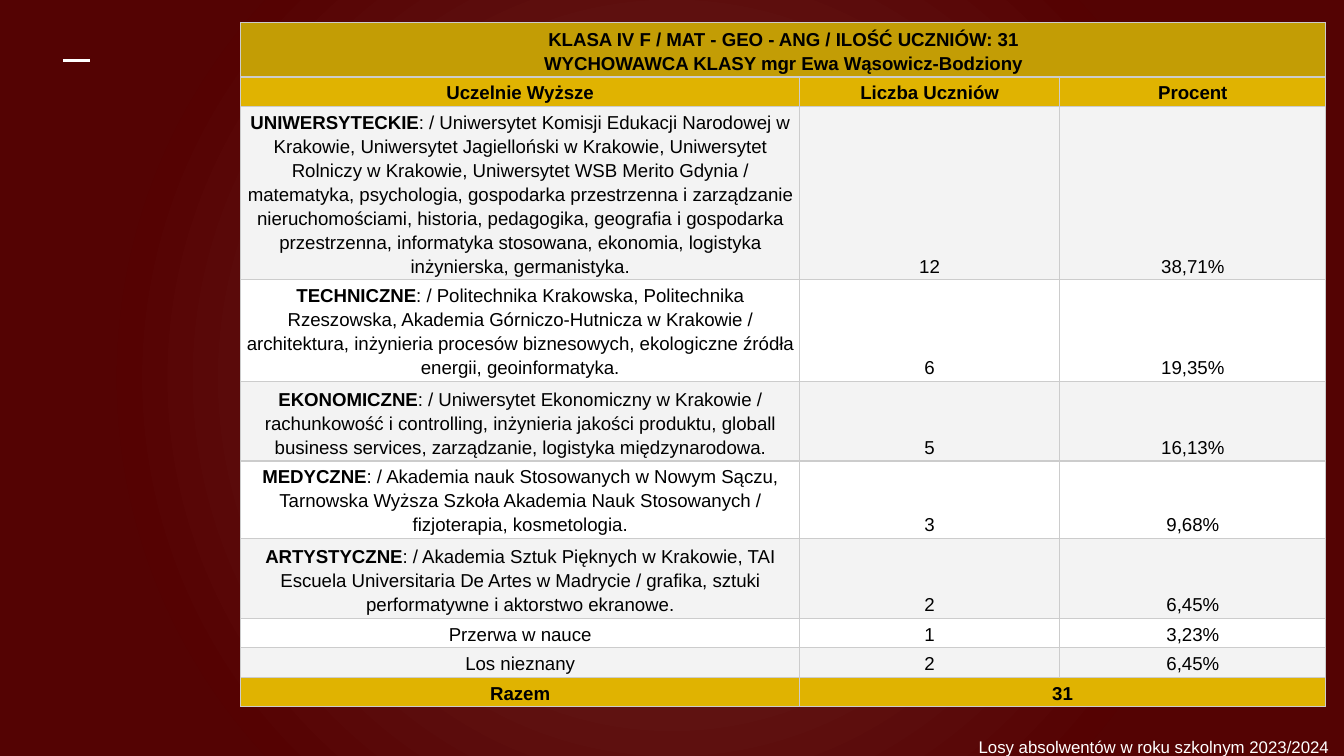
from pptx import Presentation
from pptx.dml.color import RGBColor
from pptx.enum.shapes import MSO_CONNECTOR as Connector
from pptx.enum.text import MSO_ANCHOR as Anchor, PP_ALIGN as Align
from pptx.oxml import parse_xml
from pptx.oxml.ns import nsdecls
from pptx.oxml.xmlchemy import OxmlElement
from pptx.util import Pt

PX = 9525
FONT = "Arial"
WHITE = RGBColor(0xFF, 0xFF, 0xFF)
BLACK = RGBColor(0x00, 0x00, 0x00)
LIGHT_GREY = RGBColor(0xF3, 0xF3, 0xF3)
BORDER_GREY = RGBColor(0xCC, 0xCC, 0xCC)
GOLD = RGBColor(0xE0, 0xB3, 0x01)
DARK_GOLD = RGBColor(0xC3, 0x9D, 0x05)
GLOW_RED = RGBColor(0x70, 0x2D, 0x2A)
DEEP_RED = RGBColor(0x55, 0x02, 0x02)
EDGE_RED = RGBColor(0x54, 0x03, 0x03)

COLUMNS = [399, 186, 190]
ROW_HEIGHTS = [39, 21, 109, 57, 57, 43, 57, 21, 21, 21]
TITLE = [
    "KLASA IV F / MAT - GEO - ANG / ILOŚĆ UCZNIÓW: 31",
    "WYCHOWAWCA KLASY mgr Ewa Wąsowicz-Bodziony",
]
HEADERS = ["Uczelnie Wyższe", "Liczba Uczniów", "Procent"]
RESULTS = [
    ("UNIWERSYTECKIE",
     ": / Uniwersytet Komisji Edukacji Narodowej w Krakowie, Uniwersytet Jagielloński w Krakowie, "
     "Uniwersytet Rolniczy w Krakowie, Uniwersytet WSB Merito Gdynia / matematyka, psychologia, "
     "gospodarka przestrzenna i zarządzanie nieruchomościami, historia, pedagogika, geografia i "
     "gospodarka przestrzenna, informatyka stosowana, ekonomia, logistyka inżynierska, germanistyka.",
     "12", "38,71%"),
    ("TECHNICZNE",
     ": / Politechnika Krakowska, Politechnika Rzeszowska, Akademia Górniczo-Hutnicza w Krakowie / "
     "architektura, inżynieria procesów biznesowych, ekologiczne źródła energii, geoinformatyka.",
     "6", "19,35%"),
    ("EKONOMICZNE",
     ": / Uniwersytet Ekonomiczny w Krakowie / rachunkowość i controlling, inżynieria jakości "
     "produktu, globall business services, zarządzanie, logistyka międzynarodowa.",
     "5", "16,13%"),
    ("MEDYCZNE",
     ": / Akademia nauk Stosowanych w Nowym Sączu, Tarnowska Wyższa Szkoła Akademia Nauk "
     "Stosowanych / fizjoterapia, kosmetologia.",
     "3", "9,68%"),
    ("ARTYSTYCZNE",
     ": / Akademia Sztuk Pięknych w Krakowie, TAI Escuela Universitaria De Artes w Madrycie / "
     "grafika, sztuki performatywne i aktorstwo ekranowe.",
     "2", "6,45%"),
    ("", "Przerwa w nauce", "1", "3,23%"),
    ("", "Los nieznany", "2", "6,45%"),
]


class SlideBuilder:
    def __init__(self, slide, font=FONT):
        self.slide = slide
        self.font = font

    def add_run(self, para, text, size, color, bold=False):
        span = para.add_run()
        span.text = text
        span.font.name = self.font
        span.font.size = Pt(size)
        span.font.bold = bold
        span.font.color.rgb = color

    def radial_background(self, stops):
        self.slide.background.fill.solid()
        properties = self.slide.element.cSld.bg.bgPr
        stop_xml = "".join(
            f'<a:gs pos="{position * 1000}"><a:srgbClr val="{color}"/></a:gs>'
            for position, color in stops)
        gradient = parse_xml(
            f'<a:gradFill {nsdecls("a")} rotWithShape="1"><a:gsLst>{stop_xml}</a:gsLst>'
            '<a:path path="circle"><a:fillToRect l="50000" t="50000" r="50000" b="50000"/>'
            '</a:path></a:gradFill>')
        properties.replace(properties[0], gradient)

    def line(self, x1, y1, x2, y2, color, width):
        connector = self.slide.shapes.add_connector(
            Connector.STRAIGHT, x1 * PX, y1 * PX, x2 * PX, y2 * PX)
        connector.line.color.rgb = color
        connector.line.width = Pt(width)
        connector.element.spPr.append(OxmlElement("a:effectLst"))

    def text(self, left, top, width, height, text, size, color, inset):
        box = self.slide.shapes.add_textbox(left * PX, top * PX, width * PX, height * PX)
        frame = box.text_frame
        frame.word_wrap = True
        frame.margin_left = frame.margin_top = inset * PX
        frame.margin_right = frame.margin_bottom = 0
        self.add_run(frame.paragraphs[0], text, size, color)

    def table(self, left, top, widths, heights):
        table = self.slide.shapes.add_table(
            len(heights), len(widths), left * PX, top * PX,
            sum(widths) * PX, sum(heights) * PX).table
        table.first_row = table.horz_banding = False
        for column, width in zip(table.columns, widths):
            column.width = width * PX
        for row, height in zip(table.rows, heights):
            row.height = height * PX
        return table

    def cell(self, cell, paragraphs, fill):
        cell.margin_left = cell.margin_right = 3 * PX
        cell.margin_top = cell.margin_bottom = 2 * PX
        cell.vertical_anchor = Anchor.BOTTOM
        cell.fill.solid()
        cell.fill.fore_color.rgb = fill
        properties = cell._tc.get_or_add_tcPr()
        for index, side in enumerate("LRTB"):
            properties.insert(index, parse_xml(
                f'<a:ln{side} {nsdecls("a")} w="{Pt(0.75)}"><a:solidFill>'
                f'<a:srgbClr val="{BORDER_GREY}"/></a:solidFill></a:ln{side}>'))
        frame = cell.text_frame
        for index, runs in enumerate(paragraphs):
            para = frame.add_paragraph() if index else frame.paragraphs[0]
            para.alignment = Align.CENTER
            para.line_spacing = 1.15
            for text, bold in runs:
                self.add_run(para, text, 10, BLACK, bold)


def main():
    """Build the slide on where the graduates of class IV F went."""
    deck = Presentation()
    deck.slide_width, deck.slide_height = 960 * PX, 540 * PX
    page = SlideBuilder(deck.slides.add_slide(deck.slide_layouts[6]))

    page.radial_background([(0, GLOW_RED), (72, DEEP_RED), (100, EDGE_RED)])
    page.line(45, 43, 64, 43, WHITE, 1.5)

    rows = [
        (DARK_GOLD, [[[(line, True)] for line in TITLE], [], []]),
        (GOLD, [[[(header, True)]] for header in HEADERS]),
    ]
    for index, (kind, details, count, percent) in enumerate(RESULTS):
        label = [(kind, True)] if kind else []
        fill = WHITE if index % 2 else LIGHT_GREY
        rows.append((fill, [[label + [(details, False)]], [[(count, False)]], [[(percent, False)]]]))
    rows.append((GOLD, [[[("Razem", True)]], [[("31", True)]], []]))

    table = page.table(172, 16, COLUMNS, ROW_HEIGHTS)
    for row, (fill, contents) in enumerate(rows):
        for column, paragraphs in enumerate(contents):
            page.cell(table.cell(row, column), paragraphs, fill)
    last_row = len(rows) - 1
    table.cell(0, 0).merge(table.cell(0, 2))
    table.cell(last_row, 1).merge(table.cell(last_row, 2))

    page.text(689, 516, 271, 24, "Losy absolwentów w roku szkolnym 2023/2024", 9, WHITE, 10)
    deck.save("out.pptx")


if __name__ == "__main__":
    main()
